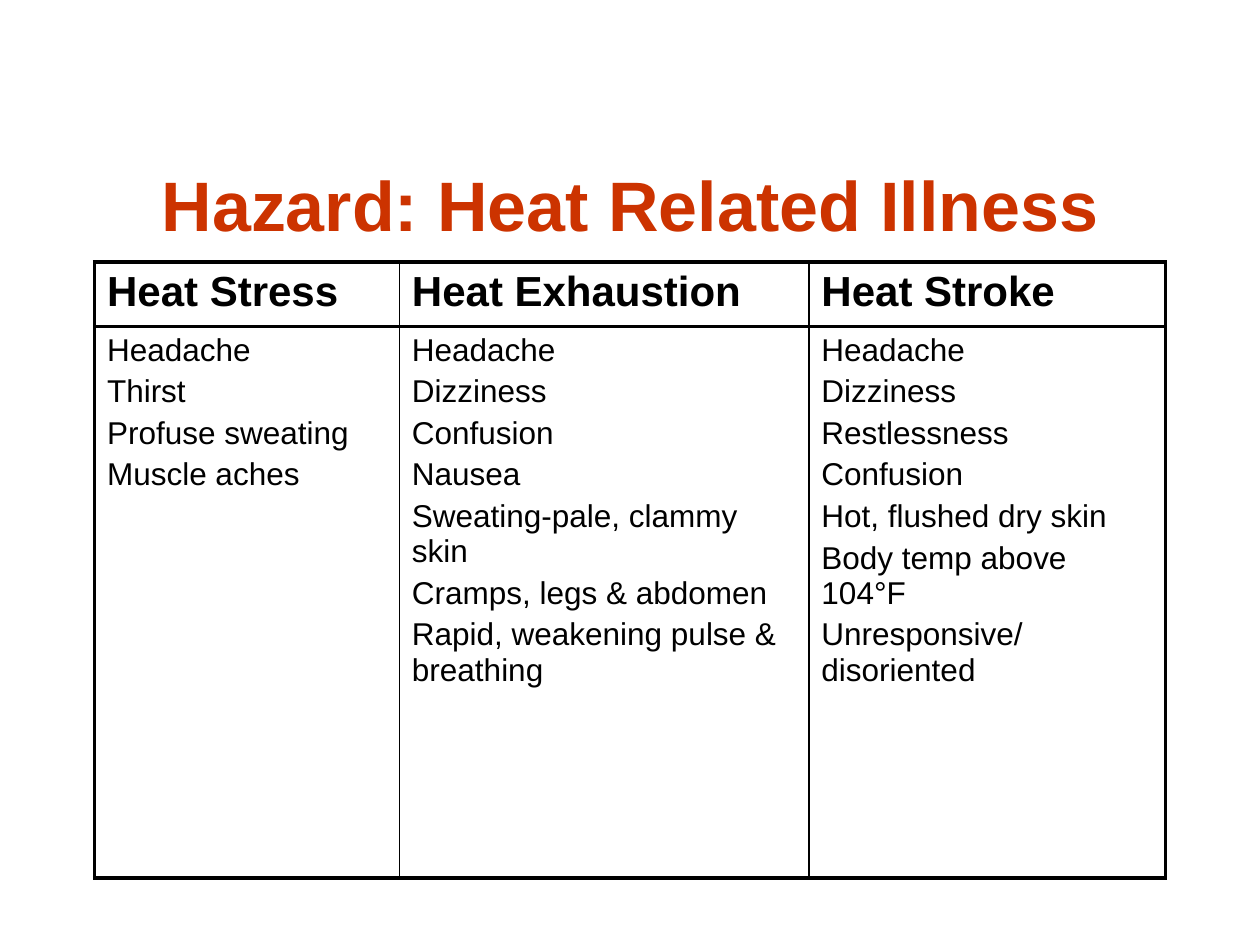
from lxml.etree import SubElement
from pptx import Presentation
from pptx.dml.color import RGBColor
from pptx.enum.text import MSO_ANCHOR, PP_ALIGN
from pptx.oxml.ns import qn
from pptx.util import Inches, Pt

THEME = {
    "title": {"name": "Arial", "size": Pt(40), "bold": True, "color": "CC3300"},
    "head": {"name": "Arial", "size": Pt(24), "bold": True, "color": "000000"},
    "body": {"name": "Arial", "size": Pt(18), "bold": False, "color": "000000"},
    "rule": "000000",
    "outer": Pt(2.25),
    "inner": Pt(1),
}

ILLNESSES = {
    "Heat Stress": ["Headache", "Thirst", "Profuse sweating", "Muscle aches"],
    "Heat Exhaustion": [
        "Headache", "Dizziness", "Confusion", "Nausea",
        "Sweating-pale, clammy skin", "Cramps, legs & abdomen",
        "Rapid, weakening pulse & breathing",
    ],
    "Heat Stroke": [
        "Headache", "Dizziness", "Restlessness", "Confusion",
        "Hot, flushed dry skin", "Body temp above 104°F",
        "Unresponsive/disoriented",
    ],
}


def write(tf, lines, style, align):
    """Fill a text frame, one paragraph per line."""
    fmt = THEME[style]
    for i, line in enumerate(lines):
        p = tf.paragraphs[0] if i == 0 else tf.add_paragraph()
        p.alignment = align
        if i:
            p.space_before = int(fmt["size"] * 0.2)
        r = p.add_run()
        r.text = line
        for key in ("name", "size", "bold"):
            setattr(r.font, key, fmt[key])
        r.font.color.rgb = RGBColor.from_string(fmt["color"])


def add_border(cell, side, width):
    """Draw one side of a table cell."""
    ln = SubElement(cell._tc.get_or_add_tcPr(), qn(f"a:{side}"), w=str(int(width)))
    fill = SubElement(ln, qn("a:solidFill"))
    SubElement(fill, qn("a:srgbClr"), val=THEME["rule"])


prs = Presentation()
prs.slide_width, prs.slide_height = Inches(10), Inches(7.5)
s = prs.slides.add_slide(prs.slide_layouts[6])

# Shared left edge and width
left = int(prs.slide_width * 0.075)
width = prs.slide_width - 2 * left

# Title
sp = s.shapes.add_textbox(left, Inches(1), width, Inches(1))
tf = sp.text_frame
tf.word_wrap = True
tf.vertical_anchor = MSO_ANCHOR.BOTTOM
write(tf, ["Hazard: Heat Related Illness"], "title", PP_ALIGN.CENTER)

# Symptom table: a heading row above a row of symptoms
cols, rows = [2.42, 3.25, 2.83], [0.51, 4.38]
table = s.shapes.add_table(
    len(rows), len(cols), left, Inches(2.08), width, Inches(sum(rows))
).table
table.first_row = table.horz_banding = False
for col, w in zip(table.columns, cols):
    col.width = Inches(w)
for row, h in zip(table.rows, rows):
    row.height = Inches(h)

# Cells: heavy frame and row rules, thin column rules
last = len(cols) - 1
for c, (heading, symptoms) in enumerate(ILLNESSES.items()):
    borders = {
        "lnL": THEME["outer" if c == 0 else "inner"],
        "lnR": THEME["outer" if c == last else "inner"],
        "lnT": THEME["outer"],
        "lnB": THEME["outer"],
    }
    for r, (lines, style) in enumerate([([heading], "head"), (symptoms, "body")]):
        cell = table.cell(r, c)
        write(cell.text_frame, lines, style, PP_ALIGN.LEFT)
        for side, w in borders.items():
            add_border(cell, side, w)
        cell.fill.background()

prs.save("out.pptx")
